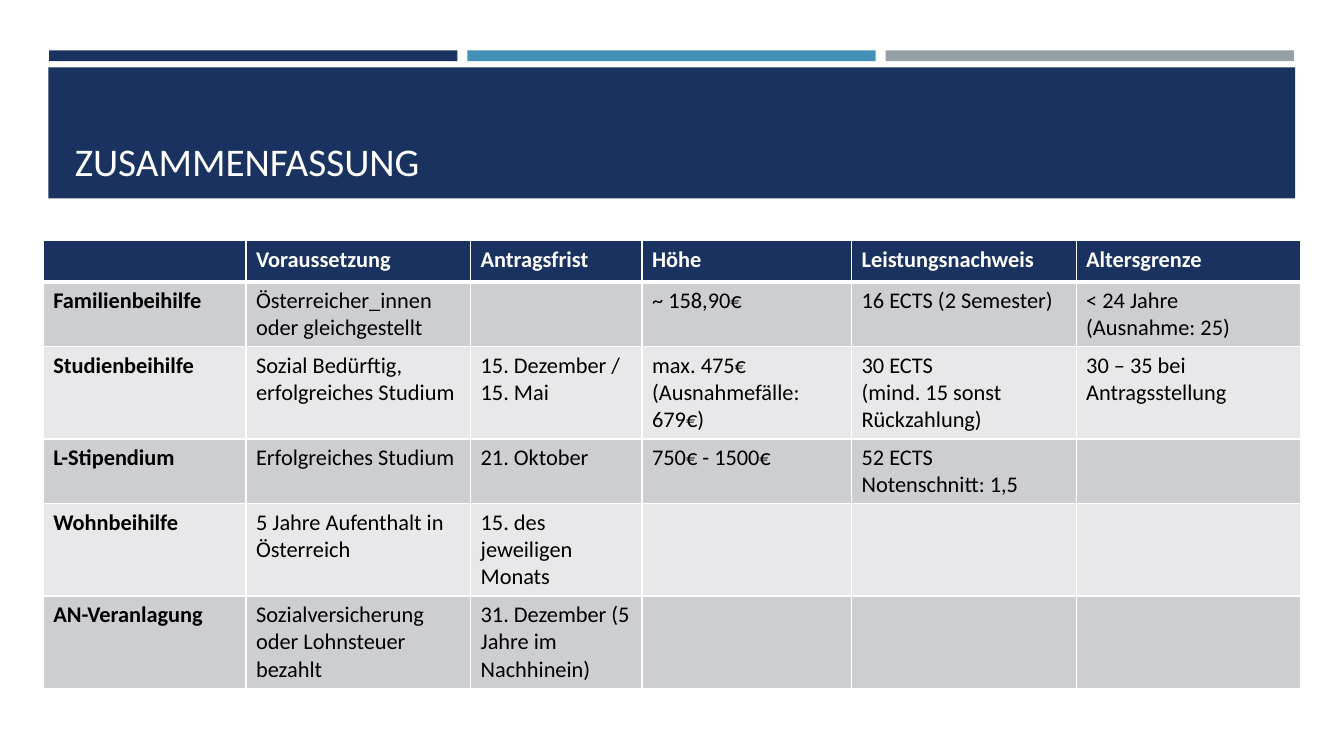
from dataclasses import dataclass

from lxml.etree import SubElement as Sub
from pptx import Presentation
from pptx.dml.color import RGBColor as Rgb
from pptx.enum.shapes import MSO_SHAPE as Shape
from pptx.enum.text import MSO_ANCHOR as Anchor, MSO_AUTO_SIZE as Fit, PP_ALIGN as Align
from pptx.oxml.ns import qn
from pptx.slide import Slide
from pptx.table import Table, _Cell as Cell
from pptx.text.text import TextFrame as Frame
from pptx.util import Cm, Pt

HUES = {
    "navy": "1A3260", "blue": "4590B8", "grey": "969FA7",
    "dark": "CDCED2", "light": "E8E8EA", "white": "FFFFFF", "black": "000000",
}
FACE = "Calibri"
WIDTHS = (5.11, 5.66, 4.32, 5.28, 5.66, 5.66)
HEIGHTS = (1.03, 1.63, 2.32, 1.63, 2.32, 2.32)
ROWS = (
    ("", "Voraussetzung", "Antragsfrist", "Höhe", "Leistungsnachweis", "Altersgrenze"),
    ("Familienbeihilfe", "Österreicher_innen oder gleichgestellt", "", "~ 158,90€",
     "16 ECTS (2 Semester)", "< 24 Jahre\n(Ausnahme: 25)"),
    ("Studienbeihilfe", "Sozial Bedürftig, erfolgreiches Studium", "15. Dezember / 15. Mai",
     "max. 475€\n(Ausnahmefälle: 679€)", "30 ECTS\n(mind. 15 sonst Rückzahlung)",
     "30 – 35 bei Antragsstellung"),
    ("L-Stipendium", "Erfolgreiches Studium", "21. Oktober", "750€ - 1500€",
     "52 ECTS\nNotenschnitt: 1,5", ""),
    ("Wohnbeihilfe", "5 Jahre Aufenthalt in Österreich", "15. des jeweiligen Monats",
     "", "", ""),
    ("AN-Veranlagung", "Sozialversicherung oder Lohnsteuer bezahlt",
     "31. Dezember (5 Jahre im Nachhinein)", "", "", ""),
)


@dataclass
class Bar:
    left: float
    top: float
    width: float
    height: float
    hue: str


STRIPES = [Bar(1.24 + 10.54 * i, 1.27, 10.29, 0.27, hue)
           for i, hue in enumerate(("navy", "blue", "grey"))]
BANNER = Bar(1.22, 1.7, 31.42, 3.3, "navy")


def tint(name: str) -> Rgb:
    return Rgb.from_string(HUES[name])


def draw_bar(slide: Slide, bar: Bar) -> None:
    rect = slide.shapes.add_shape(
        Shape.RECTANGLE, Cm(bar.left), Cm(bar.top), Cm(bar.width), Cm(bar.height))
    rect.shadow.inherit = False
    rect.fill.solid()
    rect.fill.fore_color.rgb = tint(bar.hue)
    rect.line.fill.background()


def write(frame: Frame, text: str, size: float, hue: str, bold: bool = False) -> None:
    frame.text = text
    for para in frame.paragraphs:
        para.alignment = Align.LEFT
        font = para.font
        font.name, font.size, font.bold = FACE, Pt(size), bold
        font.color.rgb = tint(hue)


def draw_title(slide: Slide) -> None:
    title = slide.shapes.title
    title.left, title.top, title.width, title.height = Cm(1.63), Cm(1.96), Cm(30.63), Cm(2.82)
    frame = title.text_frame
    frame.auto_size, frame.vertical_anchor = Fit.NONE, Anchor.BOTTOM
    write(frame, "ZUSAMMENFASSUNG", 28, "white")
    # The title must lie in front of the banner.
    title.element.getparent().append(title.element)


def rule(cell: Cell, side: str, width: float) -> None:
    """Draw a white border on one side (L, R, T or B) of a cell."""
    line = Sub(cell._tc.get_or_add_tcPr(), qn(f"a:ln{side}"), w=str(Pt(width)))
    Sub(Sub(line, qn("a:solidFill")), qn("a:srgbClr"), val=HUES["white"])


def fill_cell(table: Table, row: int, col: int) -> None:
    cell = table.cell(row, col)
    head = row == 0
    write(cell.text_frame, ROWS[row][col], 16, "white" if head else "black",
          head or col == 0)
    thick = {"T": 3 if row == 1 else 1, "B": 3 if head else 1}
    for side in "LRTB":
        rule(cell, side, thick.get(side, 1))
    cell.fill.solid()
    cell.fill.fore_color.rgb = tint("navy" if head else "dark" if row % 2 else "light")


def draw_table(slide: Slide) -> None:
    table = slide.shapes.add_table(
        len(HEIGHTS), len(WIDTHS), Cm(1.09), Cm(6.07),
        Cm(sum(WIDTHS)), Cm(sum(HEIGHTS))).table
    for col, width in enumerate(WIDTHS):
        table.columns[col].width = Cm(width)
    for row, height in enumerate(HEIGHTS):
        table.rows[row].height = Cm(height)
        for col in range(len(WIDTHS)):
            fill_cell(table, row, col)


def main() -> None:
    deck = Presentation()
    deck.slide_width, deck.slide_height = Cm(33.87), Cm(19.05)
    slide = deck.slides.add_slide(deck.slide_layouts[5])
    for bar in (*STRIPES, BANNER):
        draw_bar(slide, bar)
    draw_title(slide)
    draw_table(slide)
    deck.save("out.pptx")


if __name__ == "__main__":
    main()
